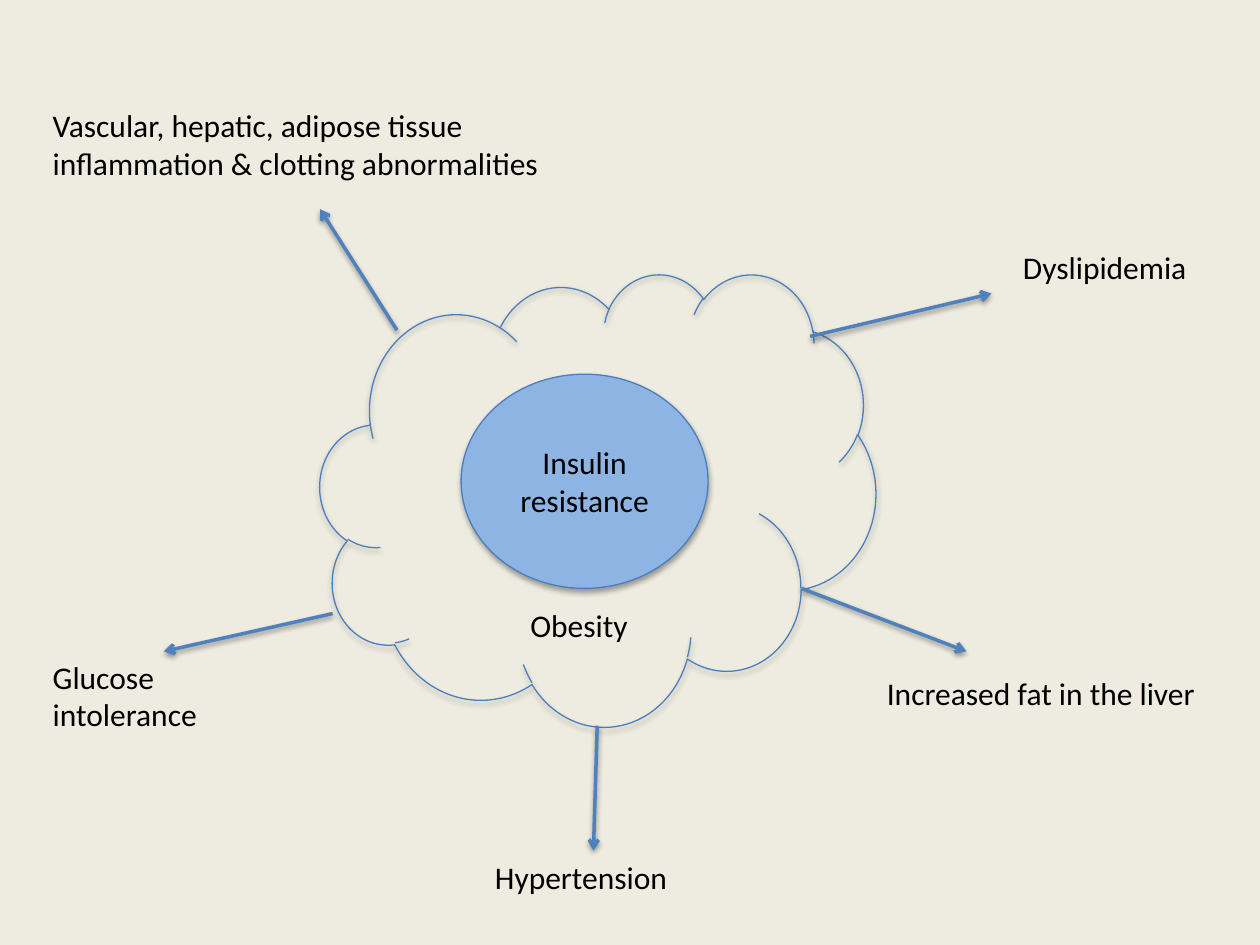
import pptx
import pptx.util
import pptx.dml.color
import pptx.enum.shapes
import pptx.enum.text
import pptx.oxml
import pptx.oxml.ns

COLS, ROWS = 100, 75
CELL = pptx.util.Inches(0.1)
INK, EDGE, RAY = "000000", "4B7EBC", "4F81BD"
KIND = pptx.enum.shapes.MSO_SHAPE
ALIGN = pptx.enum.text.PP_ALIGN
MID = pptx.enum.text.MSO_ANCHOR.MIDDLE
FONT = {"name": "Calibri", "size": pptx.util.Pt(18)}
WRAP = {"word_wrap": True}
NS = pptx.oxml.ns.nsdecls("a")


def hue(code):
    return pptx.dml.color.RGBColor.from_string(code)


def put(item, values):
    for name, value in values.items():
        setattr(item, name, value)


def span(cells):
    return round(cells * CELL)


def spot(box, x, y):
    return span(box[0] + x), span(box[1] + y)


def area(box, x, y, wide, high):
    return *spot(box, x, y), span(wide), span(high)


def shade(shape, alpha, drop):
    blur, dist = pptx.util.Pt(3.1), pptx.util.Pt(drop)
    shape._element.spPr.append(pptx.oxml.parse_xml(
        f'<a:effectLst {NS}><a:outerShdw blurRad="{blur}" dist="{dist}" '
        f'dir="5400000" rotWithShape="0"><a:srgbClr val="{INK}">'
        f'<a:alpha val="{alpha * 1000}"/></a:srgbClr></a:outerShdw></a:effectLst>'))


def write(shape, text, frame=WRAP, align=ALIGN.LEFT):
    put(shape.text_frame, frame)
    para = shape.text_frame.paragraphs[0]
    para.alignment = align
    run = para.add_run()
    run.text = text
    put(run.font, FONT)
    run.font.color.rgb = hue(INK)


def label(slide, box, place, text, frame=WRAP):
    write(slide.shapes.add_textbox(*area(box, *place)), text, frame)


def blob(slide, kind, place, fill=None):
    shape = slide.shapes.add_shape(kind, *place)
    if fill:
        shape.fill.solid()
        shape.fill.fore_color.rgb = hue(fill)
    else:
        shape.fill.background()
    shape.line.color.rgb = hue(EDGE)
    shape.line.width = pptx.util.Pt(0.75)
    shade(shape, 35, 1.8)
    return shape


def arrow(slide, box, start, end):
    line = slide.shapes.add_connector(
        pptx.enum.shapes.MSO_CONNECTOR.STRAIGHT, *spot(box, *start), *spot(box, *end))
    line.line.color.rgb = hue(RAY)
    line.line.width = pptx.util.Pt(2)
    line.line._get_or_add_ln().append(
        pptx.oxml.parse_xml(f'<a:tailEnd {NS} type="arrow"/>'))
    shade(line, 38, 1.6)


def core(slide, box):
    disc = blob(slide, KIND.OVAL, area(box, 11.2, 8, 19.6, 17), "8EB4E3")
    write(disc, "Insulin resistance",
          {**WRAP, "vertical_anchor": MID}, ALIGN.CENTER)
    blob(slide, KIND.CLOUD, area(box, 0, 0, *box[2:]))
    label(slide, box, (11.2, 25.9, 19.6, 4), "Obesity",
          {**WRAP, "margin_left": span(5.5)})


def rays(slide, box):
    parts = [
        ("Hypertension", (38.3, 67.6, 20.1, 4), (47.4, 57.6), (47.1, 67.5)),
        ("Increased fat in the liver", (69.4, 53, 28.9, 4), (63.6, 46.7), (76.7, 51.7)),
        ("Dyslipidemia", (80.2, 19.2, 18.2, 4), (64.3, 26.7), (78.7, 23.3)),
        ("Vascular, hepatic, adipose tissue inflammation & clotting abnormalities",
         (3.2, 7.9, 43.9, 10.1), (31.5, 26.2), (25.4, 16.6)),
        ("Glucose intolerance", (3.2, 51.7, 18, 7.1), (26.4, 48.7), (13, 51.7)),
    ]
    for text, place, start, end in parts:
        arrow(slide, box, start, end)
        label(slide, box, place, text)


def main():
    deck = pptx.Presentation()
    put(deck, {"slide_width": COLS * CELL, "slide_height": ROWS * CELL})
    slide = deck.slides.add_slide(deck.slide_layouts[6])
    slide.background.fill.solid()
    slide.background.fill.fore_color.rgb = hue("EEECE1")
    core(slide, (25.4, 21.7, 44.1, 35.9))
    rays(slide, (0, 0, COLS, ROWS))
    deck.save("out.pptx")


if __name__ == "__main__":
    main()
